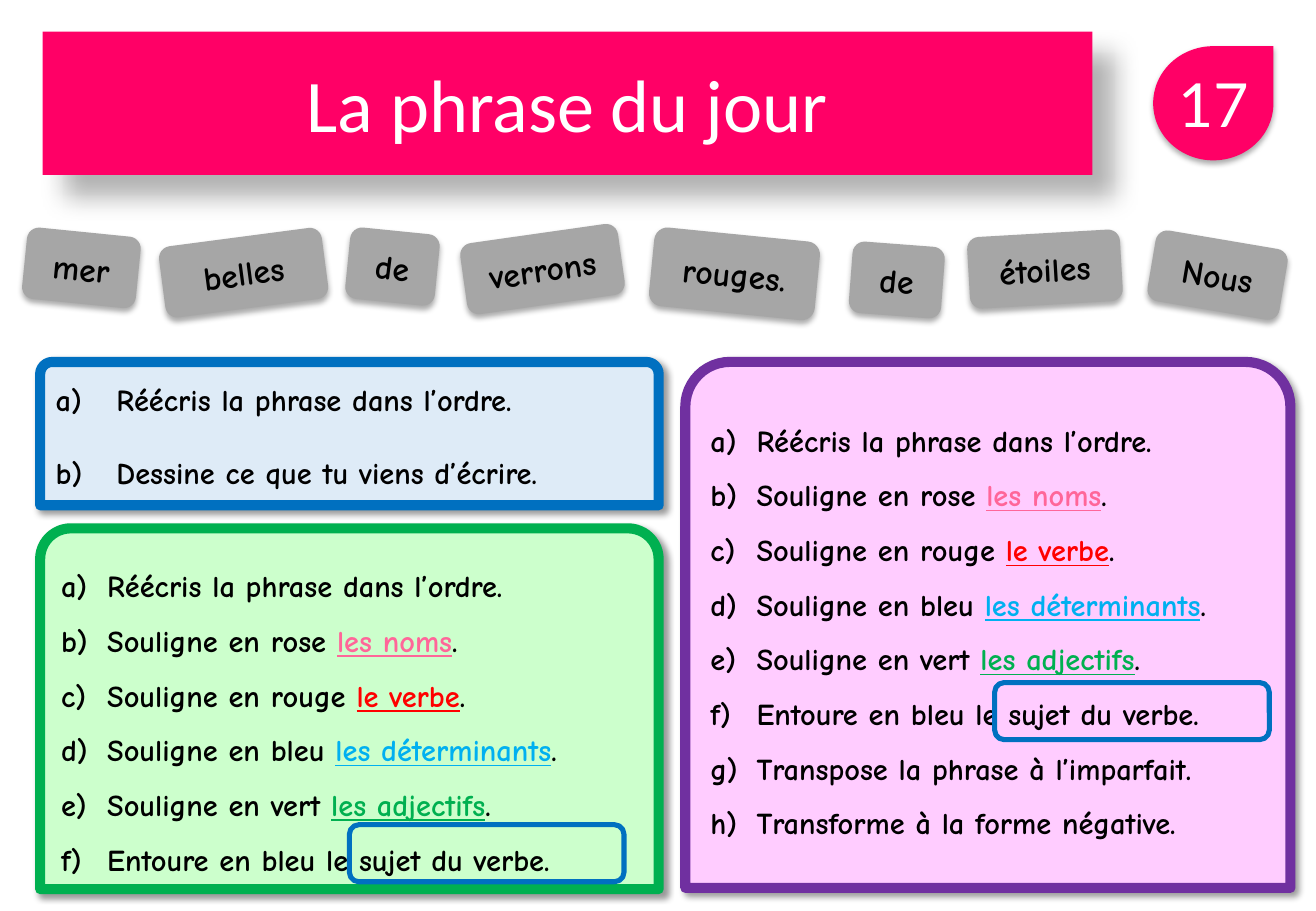
from collections import namedtuple

from lxml.etree import SubElement
from pptx import Presentation
from pptx.dml.color import RGBColor
from pptx.enum.shapes import MSO_SHAPE as Shapes
from pptx.enum.text import MSO_ANCHOR as Anchor, MSO_AUTO_SIZE as AutoSize, PP_ALIGN as Align
from pptx.oxml import parse_xml
from pptx.oxml.ns import nsdecls, qn
from pptx.util import Inches, Pt

WIDTH, HEIGHT = Inches(10.83), Inches(7.5)
HAND_FONT = "Comic Neue"
COLORS = {
    "white": "FFFFFF", "black": "000000", "pink": "FF0066", "grey": "A6A6A6",
    "blue": "0070C0", "pale blue": "DEEBF7", "green": "00B050", "pale green": "CCFFCC",
    "purple": "7030A0", "pale purple": "FFCCFF",
    "rose": "FF6699", "red": "FF0000", "sky": "00B0F0",
}
# Boxes are in hundredths of the slide's width and height.
Box = namedtuple("Box", "x y w h")
# Opacity in percent, blur and distance in points, direction in degrees.
Shadow = namedtuple("Shadow", "opacity blur distance direction")
PANEL_SHADOW = Shadow(40, 4, 3, 45)
TITLE_SHADOW = Shadow(30, 15, 18, 45)
LABEL_SHADOW = Shadow(32, 3.5, 2.2, 90)

REWRITE = ("Réécris la phrase dans l’ordre.",)
DRAW = ("Dessine ce que tu viens d’écrire.",)
ANALYSE = [
    REWRITE,
    ("Souligne en rose ", "les noms", "rose"),
    ("Souligne en rouge ", "le verbe", "red"),
    ("Souligne en bleu ", "les déterminants", "sky"),
    ("Souligne en vert ", "les adjectifs", "green"),
    ("Entoure en bleu le sujet du verbe.",),
]
TRANSFORM = [("Transpose la phrase à l’imparfait.",), ("Transforme à la forme négative.",)]

WORDS = [  # text, box, rotation
    ("mer", Box(1.85, 25.47, 8.68, 7.87), 5.7),
    ("belles", Box(12.28, 26, 12.47, 7.87), -7.5),
    ("de", Box(26.41, 25.33, 6.83, 7.87), 5.7),
    ("verrons", Box(35.18, 25.6, 12.1, 7.87), -8.1),
    ("rouges.", Box(49.49, 25.73, 12.65, 8.67), 5.7),
    ("de", Box(64.64, 26.8, 7.02, 7.87), 4.3),
    ("étoiles", Box(73.59, 25.6, 11.63, 7.87), -3.3),
    ("Nous", Box(87.44, 26.27, 10.16, 7.87), 9.6),
]


def rgb(color):
    return RGBColor.from_string(COLORS[color])


def place(shape, box):
    shape.left, shape.width = (int(WIDTH * share / 100) for share in (box.x, box.w))
    shape.top, shape.height = (int(HEIGHT * share / 100) for share in (box.y, box.h))


def paint(shape, fill=None, line=None, line_width=0, shadow=None):
    if fill:
        shape.fill.solid()
        shape.fill.fore_color.rgb = rgb(fill)
    else:
        shape.fill.background()
    if line:
        shape.line.color.rgb = rgb(line)
        shape.line.width = Pt(line_width)
    else:
        shape.line.fill.background()
    shape.shadow.inherit = False
    if shadow:
        effects = shape._element.spPr.find(qn("a:effectLst"))
        outer = SubElement(effects, qn("a:outerShdw"), blurRad=str(Pt(shadow.blur)),
                           dist=str(Pt(shadow.distance)), dir=str(shadow.direction * 60000),
                           algn="ctr", rotWithShape="0")
        tint = SubElement(outer, qn("a:srgbClr"), val=COLORS["black"])
        SubElement(tint, qn("a:alpha"), val=str(shadow.opacity * 1000))


def add_box(slide, kind, box, **look):
    shape = slide.shapes.add_shape(kind, 0, 0, 0, 0)
    place(shape, box)
    paint(shape, **look)
    return shape


def style(run, size, font, color, bold=False):
    run.font.size, run.font.name, run.font.bold = Pt(size), font, bold
    run.font.color.rgb = rgb(color)


def write_label(shape, text, size, font, color, bold=False):
    frame = shape.text_frame
    frame.text = text
    frame.vertical_anchor = Anchor.MIDDLE
    frame.paragraphs[0].alignment = Align.CENTER
    style(frame.paragraphs[0].runs[0], size, font, color, bold)


def add_heading(slide, box):
    title = slide.shapes.title
    place(title, box)
    title._element.spPr.find(qn("a:xfrm")).addnext(
        parse_xml(f'<a:prstGeom {nsdecls("a")} prst="roundRect"><a:avLst/></a:prstGeom>'))
    paint(title, "pink", shadow=TITLE_SHADOW)
    write_label(title, "La phrase du jour", 44, "Calibri", "white")
    title.text_frame.auto_size = AutoSize.NONE


def add_number(slide, box):
    badge = add_box(slide, Shapes.TEAR, box, fill="pink", shadow=LABEL_SHADOW)
    write_label(badge, "17", 36, "Lato", "white")
    badge.text_frame.margin_left = badge.text_frame.margin_right = 0


def add_words(slide):
    for text, box, rotation in WORDS:
        card = add_box(slide, Shapes.ROUNDED_RECTANGLE, box, fill="grey", shadow=LABEL_SHADOW)
        card.rotation = rotation
        write_label(card, text, 20, HAND_FONT, "black", True)


def letter(paragraph, indent):
    """Number the paragraph a), b), c) with a hanging indent."""
    properties = paragraph._p.get_or_add_pPr()
    properties.set("marL", str(Inches(indent)))
    properties.set("indent", str(-Inches(indent)))
    SubElement(properties, qn("a:buFont"), typeface="+mj-lt")
    SubElement(properties, qn("a:buAutoNum"), type="alphaLcParenR")


def write_task(paragraph, lead, marked="", color="black"):
    paragraph.text = lead
    paragraph.alignment = Align.LEFT
    if marked:
        paragraph.add_run().text = marked
        paragraph.add_run().text = "."
    for run in paragraph.runs:
        style(run, 18, HAND_FONT, "black", True)
    if marked:
        paragraph.runs[1].font.color.rgb = rgb(color)
        paragraph.runs[1].font.underline = True


def add_panel(slide, box, color, tasks, indent=0.38, spacing=1.5, first_spacing=1.5, gap=0):
    panel = add_box(slide, Shapes.ROUND_2_SAME_RECTANGLE, box, fill=f"pale {color}",
                    line=color, line_width=6, shadow=PANEL_SHADOW)
    panel.adjustments[0] = 0.085
    frame = panel.text_frame
    frame.vertical_anchor = Anchor.MIDDLE
    for index, task in enumerate(tasks):
        paragraph = frame.add_paragraph() if index else frame.paragraphs[0]
        write_task(paragraph, *task)
        paragraph.line_spacing = spacing if index else first_spacing
        paragraph.space_before = Pt(gap if index else 0)
        letter(paragraph, indent)


def add_subject_ring(slide, panel, drop):
    ring = Box(panel.x + 23.5, panel.y + drop, 20.87, 6.27)
    add_box(slide, Shapes.ROUNDED_RECTANGLE, ring, line="blue", line_width=3)


def main():
    deck = Presentation()
    deck.slide_width, deck.slide_height = WIDTH, HEIGHT
    slide = deck.slides.add_slide(deck.slide_layouts[5])
    easy = Box(3.05, 39.73, 47, 15.73)
    medium = Box(3.05, 58, 47, 39.6)
    hard = Box(52.08, 39.73, 45.98, 57.73)

    add_panel(slide, hard, "purple", ANALYSE + TRANSFORM, first_spacing=1)
    add_panel(slide, medium, "green", ANALYSE)
    add_panel(slide, easy, "blue", [REWRITE, DRAW], 0.5, 1, 1, gap=21.6)
    add_heading(slide, Box(3.23, 3.47, 79.78, 15.73))
    add_number(slide, Box(87.63, 5.07, 9.14, 12.53))
    add_words(slide)
    add_subject_ring(slide, medium, 32.53)
    add_subject_ring(slide, hard, 35.2)
    deck.save("out.pptx")


if __name__ == "__main__":
    main()
